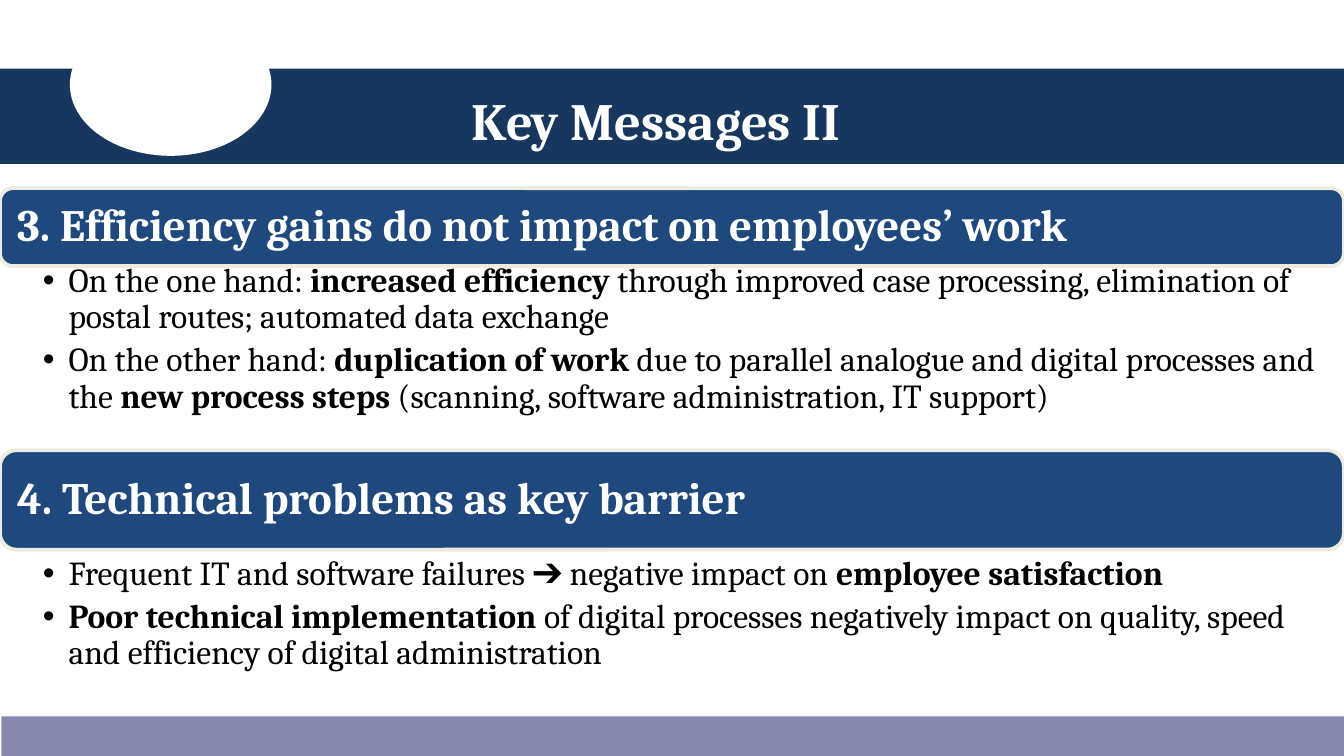
from lxml import etree
from pptx import Presentation
from pptx.dml.color import RGBColor
from pptx.enum import shapes, text
from pptx.oxml import ns
from pptx.util import Inches, Pt

NAVY = RGBColor(0x17, 0x37, 0x5E)
BLUE = RGBColor(0x1F, 0x49, 0x7D)
CREAM = RGBColor(0xEE, 0xEC, 0xE1)
LILAC = RGBColor(0x87, 0x87, 0xAF)
WHITE = RGBColor(0xFF, 0xFF, 0xFF)
BLACK = RGBColor(0, 0, 0)

# 16:9 slide
prs = Presentation()
prs.slide_width = Inches(10)
prs.slide_height = Inches(10) * 9 // 16
s = prs.slides.add_slide(prs.slide_layouts[6])


def add_shape(kind, box, fill, line=None):
    sp = s.shapes.add_shape(kind, *map(Inches, box))
    sp.shadow.inherit = False
    sp.fill.solid()
    sp.fill.fore_color.rgb = fill
    if line is None:
        sp.line.fill.background()
    else:
        sp.line.color.rgb = line
        sp.line.width = Pt(2)


def add_text(box, paragraphs, size, color, insets, anchor,
             spacing=0.9, bullet=False):
    """Each paragraph is a list of (text, bold) runs."""
    tf = s.shapes.add_textbox(*map(Inches, box)).text_frame
    tf.word_wrap = True
    tf.vertical_anchor = anchor
    (tf.margin_left, tf.margin_top,
     tf.margin_right, tf.margin_bottom) = map(Inches, insets)
    for i, runs in enumerate(paragraphs):
        p = tf.paragraphs[0] if i == 0 else tf.add_paragraph()
        if bullet:
            pPr = p._p.get_or_add_pPr()
            pPr.set("marL", str(Inches(0.19)))
            pPr.set("indent", str(-Inches(0.19)))
            etree.SubElement(pPr, ns.qn("a:buFont")).set("typeface", "Arial")
            etree.SubElement(pPr, ns.qn("a:buChar")).set("char", "•")
            p.space_after = Pt(3.6)
        p.line_spacing = spacing
        for words, bold in runs:
            r = p.add_run()
            r.text = words
            r.font.name = "Cambria"
            r.font.size = Pt(size)
            r.font.bold = bold
            r.font.color.rgb = color


# Header band with round cut-out, and footer band
shape = shapes.MSO_SHAPE
add_shape(shape.RECTANGLE, (0, 0.51, 10, 0.71), NAVY)
add_shape(shape.OVAL, (0.52, 0.1, 1.5, 1.06), WHITE)
add_shape(shape.RECTANGLE, (0.01, 5.33, 10, 0.3), LILAC)

# Title
middle, top = text.MSO_ANCHOR.MIDDLE, text.MSO_ANCHOR.TOP
add_text((3.41, 0.68, 6.91, 0.42), [[("Key Messages II", True)]],
         28, WHITE, (0.1, 0.05, 0.1, 0.05), middle, spacing=1.0)

# Messages: heading, bar top and height, bullets top and height, bullets
messages = [
    ("3. Efficiency gains do not impact on employees’ work",
     1.4, 0.58, 1.93, 1.39, [
         [("On the one hand: ", False), ("increased efficiency ", True),
          ("through improved case processing, elimination of postal routes; "
           "automated data exchange", False)],
         [("On the other hand: ", False), ("duplication of work ", True),
          ("due to parallel analogue and digital processes and the ", False),
          ("new process steps", True),
          (" (scanning, software administration, IT support)", False)],
     ]),
    ("4. Technical problems as key barrier",
     3.35, 0.74, 4.11, 1.36, [
         [("Frequent IT and software failures ➔ negative impact on ", False),
          ("employee satisfaction", True)],
         [("Poor technical implementation", True),
          (" of digital processes negatively impact on quality, speed and "
           "efficiency of digital administration", False)],
     ]),
]
for heading, bar_y, bar_h, body_y, body_h, bullets in messages:
    add_shape(shape.ROUNDED_RECTANGLE, (0, bar_y, 10, bar_h), BLUE, CREAM)
    add_text((0.03, bar_y + 0.03, 9.94, bar_h - 0.06), [[(heading, True)]],
             24, WHITE, (0.1, 0.1, 0.1, 0.1), middle)
    add_text((0, body_y, 10, body_h), bullets,
             18, BLACK, (0.32, 0.03, 0.14, 0.03), top, bullet=True)

prs.save("out.pptx")
